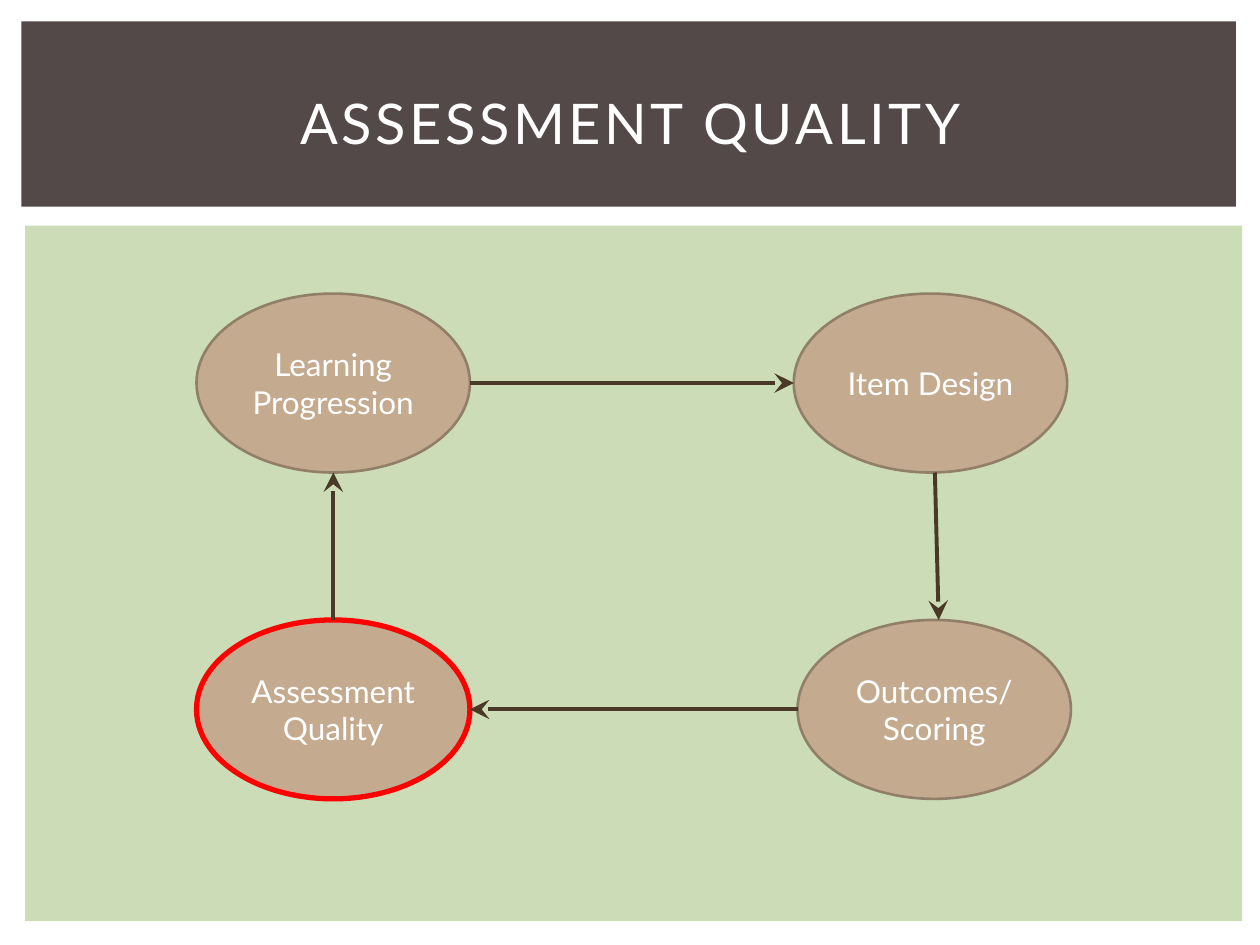
from lxml import etree
from pptx import Presentation
from pptx.dml.color import RGBColor
from pptx.enum import shapes, text
from pptx.oxml import ns
from pptx.util import Inches, Pt

FONT = "Lato"
WHITE = "FFFFFF"
OVAL_WIDTH, OVAL_HEIGHT = 2.17, 1.42
LEFT_COLUMN, TOP_ROW, BOTTOM_ROW = 1.56, 2.33, 4.92
DESIGN_LEFT, SCORING_LEFT = 6.3, 6.33


def paint(color_format, hex_color):
    color_format.rgb = RGBColor.from_string(hex_color)


def add_filled(slide, kind, box, fill, outline=None, outline_width=1.5):
    shape = slide.shapes.add_shape(kind, *map(Inches, box))
    shape.shadow.inherit = False
    shape.fill.solid()
    paint(shape.fill.fore_color, fill)
    if outline:
        paint(shape.line.color, outline)
        shape.line.width = Pt(outline_width)
    else:
        shape.line.fill.background()
    return shape


def write_centred(shape, wording, size, spacing=0):
    """Put one centred white run in the shape; spacing is between letters, in points."""
    frame = shape.text_frame
    frame.word_wrap = True
    frame.vertical_anchor = text.MSO_ANCHOR.MIDDLE
    paragraph = frame.paragraphs[0]
    paragraph.alignment = text.PP_ALIGN.CENTER
    run = paragraph.add_run()
    run.text = wording
    run.font.name = FONT
    run.font.size = Pt(size)
    paint(run.font.color, WHITE)
    if spacing:
        run.font._element.set("spc", str(spacing * 100))


def add_stage(slide, wording, left, top, outline="917F6A", outline_width=1.5):
    oval = add_filled(slide, shapes.MSO_SHAPE.OVAL,
                      (left, top, OVAL_WIDTH, OVAL_HEIGHT),
                      "C4AB8F", outline, outline_width)
    write_centred(oval, wording, 18)


def add_arrow(slide, start, end):
    arrow = slide.shapes.add_connector(
        shapes.MSO_CONNECTOR.STRAIGHT, *map(Inches, (*start, *end)))
    paint(arrow.line.color, "4A3927")
    arrow.line.width = Pt(2.25)
    etree.SubElement(arrow.line._get_or_add_ln(), ns.qn("a:tailEnd"),
                     type="stealth", w="lg", len="lg")
    etree.SubElement(arrow._element.spPr, ns.qn("a:effectLst"))


def add_title(slide, wording):
    title = slide.shapes.add_textbox(*map(Inches, (0.42, 0.39, 9.17, 1.15)))
    write_centred(title, wording, 32, spacing=2)


def main():
    deck = Presentation()
    deck.slide_width, deck.slide_height = Inches(10), Inches(7.5)
    slide = deck.slides.add_slide(deck.slide_layouts[6])

    rectangle = shapes.MSO_SHAPE.RECTANGLE
    add_filled(slide, rectangle, (0.2, 1.79, 9.66, 5.52), "CBDCB6")
    add_filled(slide, rectangle, (0.17, 0.17, 9.64, 1.47), "534949")
    add_title(slide, "ASSESSMENT QUALITY")

    add_stage(slide, "Learning Progression", LEFT_COLUMN, TOP_ROW)
    add_stage(slide, "Item Design", DESIGN_LEFT, TOP_ROW)
    add_stage(slide, "Outcomes/Scoring", SCORING_LEFT, BOTTOM_ROW)
    add_stage(slide, "Assessment Quality", LEFT_COLUMN, BOTTOM_ROW, "FF0000", 3)

    left_edge = LEFT_COLUMN + OVAL_WIDTH
    left_middle = LEFT_COLUMN + OVAL_WIDTH / 2
    top_middle = TOP_ROW + OVAL_HEIGHT / 2
    bottom_middle = BOTTOM_ROW + OVAL_HEIGHT / 2
    top_row_end = TOP_ROW + OVAL_HEIGHT
    add_arrow(slide, (left_edge, top_middle), (DESIGN_LEFT, top_middle))
    add_arrow(slide, (7.42, top_row_end), (7.45, BOTTOM_ROW))
    add_arrow(slide, (SCORING_LEFT, bottom_middle), (left_edge, bottom_middle))
    add_arrow(slide, (left_middle, BOTTOM_ROW), (left_middle, top_row_end))

    deck.save("out.pptx")


if __name__ == "__main__":
    main()
